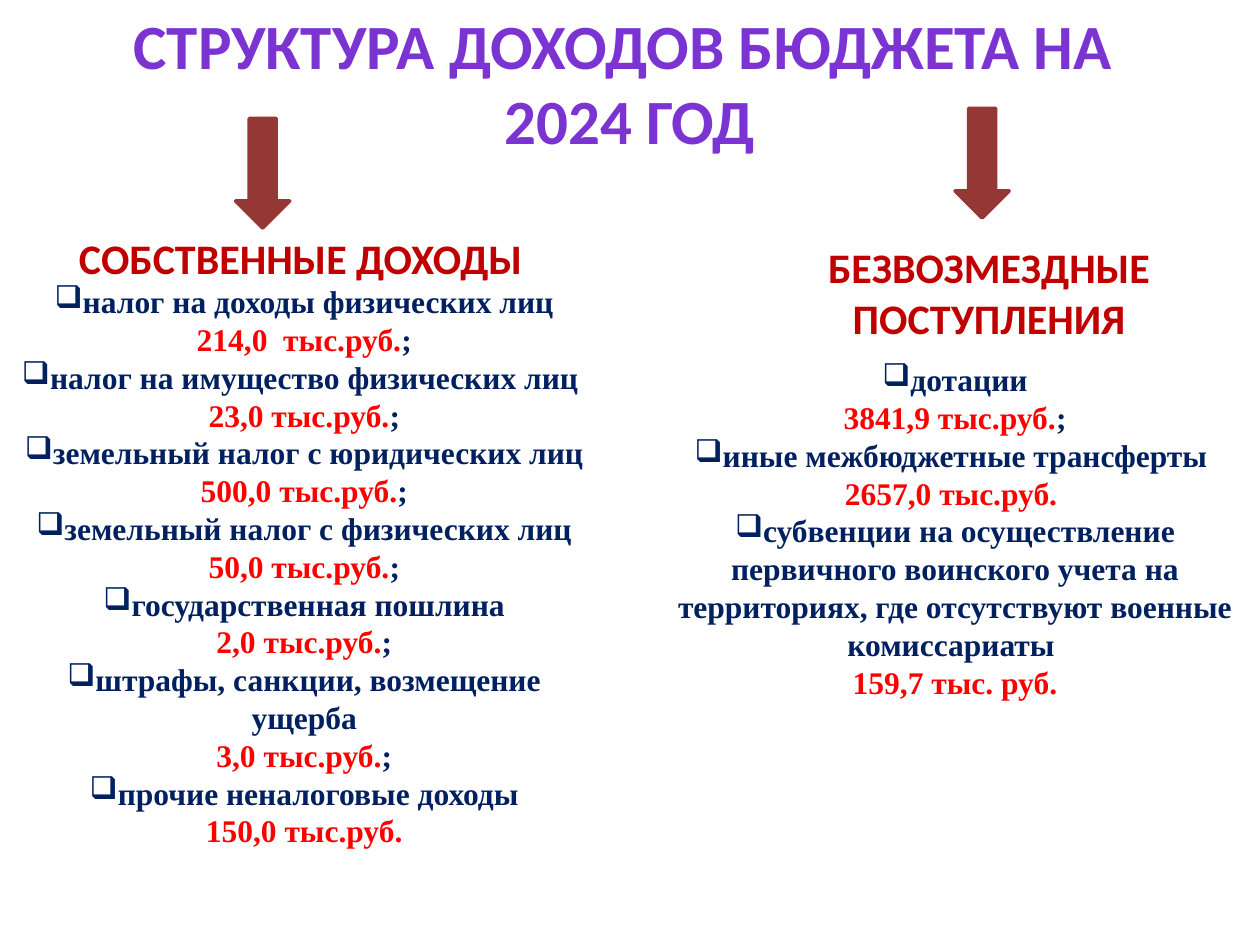
import pptx
import pptx.util
import pptx.dml.color
import pptx.enum.shapes
import pptx.enum.text
from lxml import etree

Inches = pptx.util.Inches
Pt = pptx.util.Pt
NS = "http://schemas.openxmlformats.org/drawingml/2006/main"
COLORS = {"title": "7B34D2", "arrow": "953735", "head": "C00000",
          "item": "002060", "sum": "FF0000"}
FONTS = {
    "title": {"name": "Calibri", "size": Pt(36), "bold": True},
    "head": {"name": "Calibri", "size": Pt(24), "bold": True},
    "item": {"name": "Times New Roman", "size": Pt(18), "bold": True},
}
FONTS["sum"] = FONTS["item"]
FRAME = {"word_wrap": True, "auto_size": pptx.enum.text.MSO_AUTO_SIZE.NONE,
         "vertical_anchor": pptx.enum.text.MSO_ANCHOR.TOP,
         "margin_left": Inches(0.1), "margin_right": Inches(0.1),
         "margin_top": Inches(0.05), "margin_bottom": Inches(0.05)}

TITLE = ["СТРУКТУРА ДОХОДОВ БЮДЖЕТА НА ", "2024 ГОД"]
OWN = [
    ("налог на доходы физических лиц", "214,0  тыс.руб.", ";"),
    ("налог на имущество физических лиц ", "23,0 тыс.руб.", ";"),
    ("земельный налог с юридических лиц", "500,0 тыс.руб.", ";"),
    ("земельный налог с физических лиц", "50,0 тыс.руб.", ";"),
    ("государственная пошлина", "2,0 тыс.руб.", ";"),
    ("штрафы, санкции, возмещение ущерба", "3,0 тыс.руб.", ";"),
    ("прочие неналоговые доходы", "150,0 тыс.руб.", ""),
]
GRANTS = [
    ("дотации", "3841,9 тыс.руб.", ";"),
    ("иные межбюджетные трансферты ", "2657,0 тыс.руб. ", ""),
    ("субвенции на осуществление первичного воинского учета на "
     "территориях, где отсутствуют военные комиссариаты ",
     "159,7 тыс. руб.", ""),
]


def assign(target, values):
    """Set each attribute named in values on the target."""
    for name, value in values.items():
        setattr(target, name, value)


def color(key):
    """Return the named colour."""
    return pptx.dml.color.RGBColor.from_string(COLORS[key])


def add_run(para, text, style):
    """Add a run in one of the text styles."""
    run = para.add_run()
    run.text = text
    assign(run.font, FONTS[style])
    run.font.color.rgb = color(style)


def add_bullet(para):
    """Give a paragraph a square bullet that touches its text."""
    props = para._p.get_or_add_pPr()
    props.set("marL", "0")
    props.set("indent", "0")
    etree.SubElement(props, f"{{{NS}}}buChar").set("char", "❑")


def fill_text(shape, lines, spacing=None):
    """Write centred lines, each a bullet flag and a list of styled runs."""
    frame = shape.text_frame
    assign(frame, FRAME)
    for index, (bullet, runs) in enumerate(lines):
        para = frame.add_paragraph() if index else frame.paragraphs[0]
        para.alignment = pptx.enum.text.PP_ALIGN.CENTER
        if spacing:
            para.line_spacing = spacing
        if bullet:
            add_bullet(para)
        for text, style in runs:
            add_run(para, text, style)


def add_title(slide, box):
    """Place the slide title in the box."""
    title = slide.shapes.title
    assign(title, dict(zip(("left", "top", "width", "height"), map(Inches, box))))
    fill_text(title, [(False, [(line, "title")]) for line in TITLE])


def add_arrow(slide, left, top):
    """Draw a down arrow at the given corner."""
    arrow = slide.shapes.add_shape(
        pptx.enum.shapes.MSO_SHAPE.DOWN_ARROW,
        Inches(left), Inches(top), Inches(0.43), Inches(0.87))
    arrow.shadow.inherit = False
    arrow.fill.solid()
    arrow.fill.fore_color.rgb = color("arrow")
    arrow.line.color.rgb = color("arrow")
    arrow.line.width = Pt(2)


def add_head(slide, box, text):
    """Place a column heading in the box."""
    head = slide.shapes.add_textbox(*map(Inches, box))
    fill_text(head, [(False, [(text, "head")])])


def add_items(slide, box, items):
    """List income items, each with its sum on the next line."""
    lines = []
    for name, total, end in items:
        lines.append((True, [(name, "item")]))
        lines.append((False, [(total, "sum")] + ([(end, "item")] if end else [])))
    fill_text(slide.shapes.add_textbox(*map(Inches, box)), lines, Pt(21.6))


def main():
    """Build the slide and save it."""
    deck = pptx.Presentation()
    deck.slide_width, deck.slide_height = Inches(10), Inches(7.5)
    slide = deck.slides.add_slide(deck.slide_layouts[5])
    add_title(slide, (0, 0, 10, 1.31))
    add_arrow(slide, 1.87, 0.94)
    add_arrow(slide, 7.58, 0.86)
    add_head(slide, (0.08, 1.8, 4.61, 0.5), "СОБСТВЕННЫЕ ДОХОДЫ")
    add_head(slide, (5.86, 1.87, 3.98, 0.91), "БЕЗВОЗМЕЗДНЫЕ ПОСТУПЛЕНИЯ")
    add_items(slide, (0, 2.19, 4.83, 4.95), OWN)
    add_items(slide, (5.16, 2.81, 4.84, 3.13), GRANTS)
    deck.save("out.pptx")


if __name__ == "__main__":
    main()
